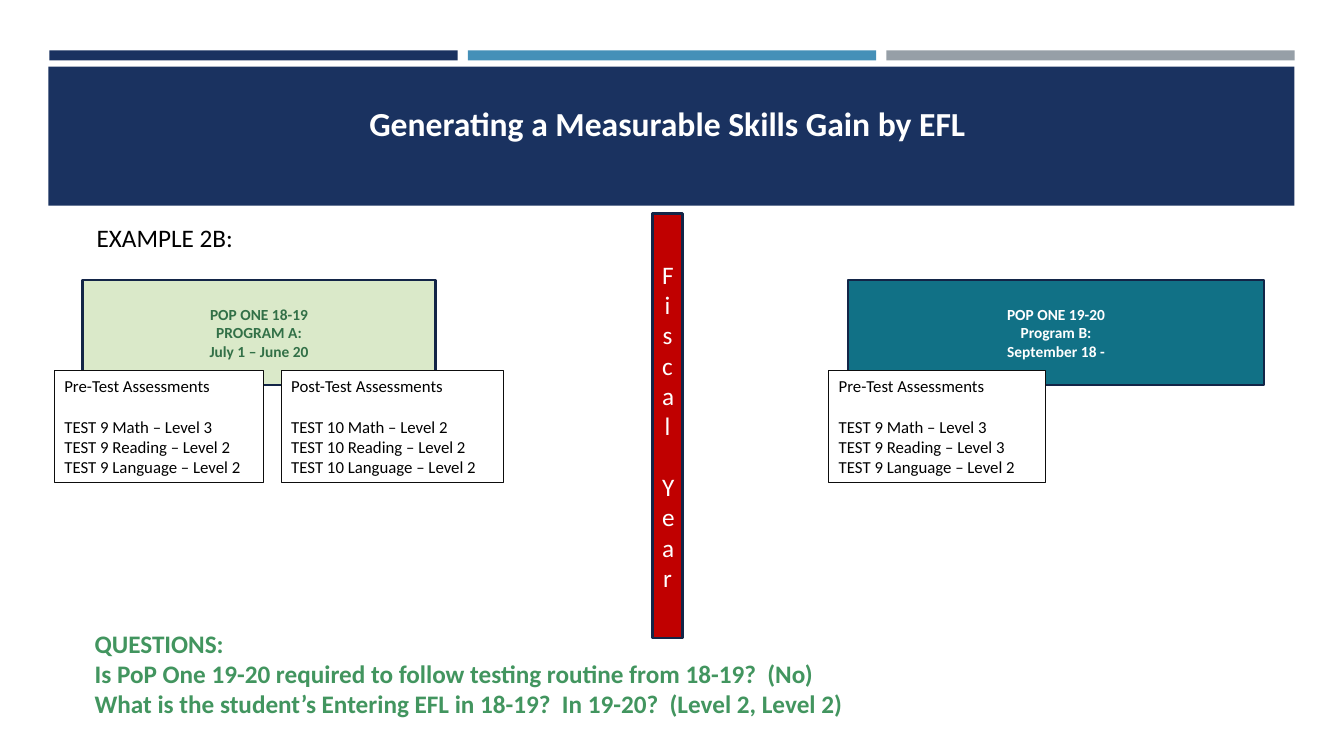
from pptx import Presentation
from pptx.dml.color import RGBColor
from pptx.enum.shapes import MSO_SHAPE
from pptx.enum.text import MSO_ANCHOR, PP_ALIGN
from pptx.util import Inches, Pt

COLORS = {
    "navy": "1A3260", "blue": "4590B8", "gray": "969FA7", "edge": "132547",
    "mint": "DAE9C9", "forest": "327047", "teal": "117186", "red": "C00000",
    "green": "42955F", "white": "FFFFFF", "black": "000000", "ink": "0D0D0D",
}


class Deck:
    """Holds the style and the current slide."""

    def __init__(self, font):
        self.font = font
        self.prs = Presentation()
        self.prs.slide_width = Inches(13.33)
        self.prs.slide_height = Inches(7.5)
        self.slide = self.prs.slides.add_slide(self.prs.slide_layouts[6])

    def color(self, name):
        return RGBColor.from_string(COLORS[name])

    def box(self, at, fill, edge=None, width=1.75):
        shape = self.slide.shapes.add_shape(MSO_SHAPE.RECTANGLE, *map(Inches, at))
        shape.shadow.inherit = False
        shape.fill.solid()
        shape.fill.fore_color.rgb = self.color(fill)
        if edge:
            shape.line.color.rgb = self.color(edge)
            shape.line.width = Pt(width)
        else:
            shape.line.fill.background()
        return shape

    def set_text(self, shape, lines, size, color, bold=False,
                 align=PP_ALIGN.LEFT, anchor=MSO_ANCHOR.TOP):
        frame = shape.text_frame
        frame.word_wrap = True
        frame.vertical_anchor = anchor
        frame.text = "\n".join(lines)
        for para in frame.paragraphs:
            para.alignment = align
            for run in para.runs:
                run.font.name = self.font
                run.font.size = Pt(size)
                run.font.bold = bold
                run.font.color.rgb = self.color(color)
        return frame

    def label(self, at, lines, size, color, **style):
        shape = self.slide.shapes.add_textbox(*map(Inches, at))
        self.set_text(shape, lines, size, color, **style)

    def panel(self, at, lines, size, fill, color, bold=False):
        """Add an outlined box with its text in the middle."""
        shape = self.box(at, fill, "edge")
        return self.set_text(shape, lines, size, color, bold,
                             PP_ALIGN.CENTER, MSO_ANCHOR.MIDDLE)

    def scores(self, left, width, stage, test, levels):
        """Add a list of test levels by subject."""
        shape = self.box((left, 3.68, width, 1.11), "white", "ink", 0.75)
        subjects = ("Math", "Reading", "Language")
        lines = [f"{stage}-Test Assessments"]
        lines += [f"{test} {name} – Level {level}"
                  for name, level in zip(subjects, levels)]
        frame = self.set_text(shape, lines, 12, "black")
        frame.paragraphs[0].space_after = Pt(14.6)


def main():
    deck = Deck("Calibri")

    for i, fill in enumerate(("navy", "blue", "gray")):
        deck.box((0.49 + 4.15 * i, 0.5, 4.05, 0.1), fill)
    deck.box((0.48, 0.66, 12.36, 1.38), "navy")
    deck.label((0.54, 0.97, 12.16, 0.5),
               ["Generating a Measurable Skills Gain by EFL"],
               24, "white", bold=True, align=PP_ALIGN.CENTER)
    deck.label((0.86, 2.16, 3.41, 0.42), ["EXAMPLE 2B:"], 18, "black")

    deck.panel((0.82, 2.78, 3.5, 1.04),
               ["POP ONE 18-19", "PROGRAM A:", "July 1 – June 20"],
               11, "mint", "forest", True)
    deck.panel((8.41, 2.78, 4.13, 1.04),
               ["POP ONE 19-20", "Program B:", "September 18 -"],
               11, "teal", "white", True)

    deck.scores(0.54, 2.07, "Pre", "TEST 9", (3, 2, 2))
    deck.scores(2.79, 2.2, "Post", "TEST 10", (2, 2, 2))
    deck.scores(8.22, 2.15, "Pre", "TEST 9", (3, 3, 2))

    # The narrow bar stacks its words letter by letter
    year = deck.panel((6.47, 2.12, 0.3, 4.21), ["Fiscal", "Year"],
                      18, "red", "white")
    year.paragraphs[1].space_before = Pt(22)

    deck.label((0.84, 6.18, 10.77, 1.01), [
        "QUESTIONS:",
        "Is PoP One 19-20 required to follow testing routine from 18-19?  (No)",
        "What is the student’s Entering EFL in 18-19?  In 19-20?  (Level 2, Level 2)",
    ], 18, "green", bold=True)

    deck.prs.save("out.pptx")


if __name__ == "__main__":
    main()
